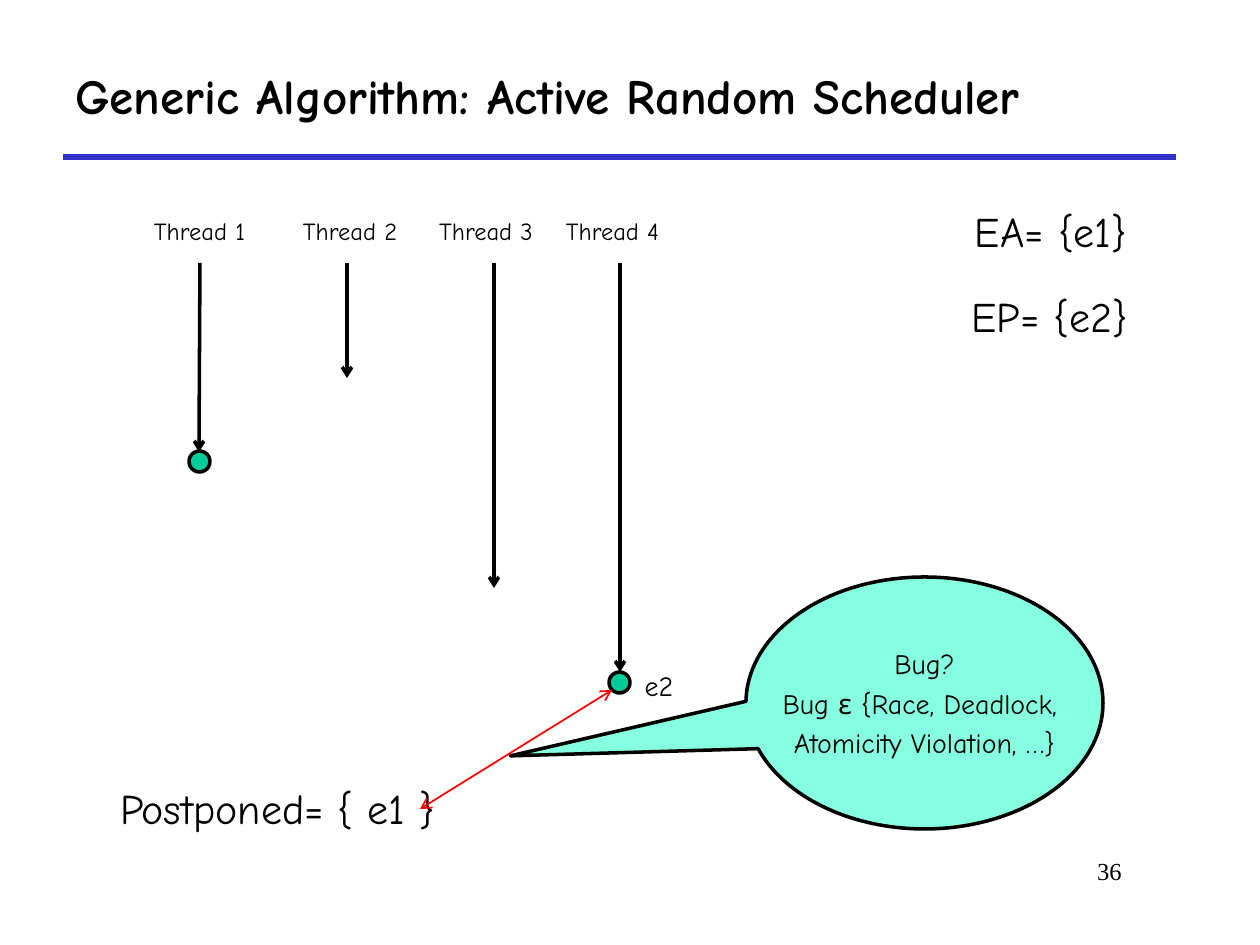
from pptx import Presentation, util as u
from pptx.dml.color import RGBColor
from pptx.enum import shapes, text
from pptx.oxml.ns import qn
from lxml import etree

PX = 914400 / 126
FONT = "Comic Neue"
BLACK = RGBColor(0, 0, 0)
BLUE = RGBColor(0x33, 0x33, 0xCC)
RED = RGBColor(0xFF, 0, 0)
GREEN = RGBColor(0, 0xCC, 0x99)
MINT = RGBColor(0x85, 0xFF, 0xE0)

TITLE = "Generic Algorithm: Active Random Scheduler"
PAGE = "36"
# Thread name, label left, label width, arrow x at top and bottom, arrow end y
THREADS = [
    ("Thread 1", 136, 127, 200, 199, 452),
    ("Thread 2", 284, 132, 347, 347, 378),
    ("Thread 3", 420, 132, 494, 494, 588),
    ("Thread 4", 546, 133, 620, 620, 672),
]
THREAD_TOP, LABEL_TOP = 263, 210
EVENTS = [(189, 451), (609, 672)]
EVENT_SIZE = 21
# Text, left, top, width, height, size
NOTES = [
    ("EA= {e1}", 955, 199, 192, 64, 24),
    ("EP= {e2}", 955, 284, 189, 64, 24),
    ("Postponed= { e1 } ", 105, 776, 359, 64, 24),
    ("e2", 630, 662, 58, 47, 16),
]
# Callout lines, each a list of (text, font)
CALLOUT = [
    [("Bug?", FONT)],
    [("Bug ", FONT), ("ε", "Noto Sans"), (" {Race, Deadlock, ", FONT)],
    [("Atomicity Violation, …}", FONT)],
]

prs = Presentation()


def px(*values):
    return [u.Emu(round(v * PX)) for v in values]


prs.slide_width, prs.slide_height = px(1260, 945)
s = prs.slides.add_slide(prs.slide_layouts[6])


def style_run(r, size, font=FONT, bold=False):
    r.font.size = u.Pt(size)
    r.font.name = font
    r.font.bold = bold
    r.font.color.rgb = BLACK


def add_text(content, box, size, font=FONT, bold=False, wrap=False,
             align=text.PP_ALIGN.CENTER, anchor=text.MSO_ANCHOR.TOP):
    tf = s.shapes.add_textbox(*px(*box)).text_frame
    tf.word_wrap = wrap
    tf.vertical_anchor = anchor
    tf.text = content
    p = tf.paragraphs[0]
    p.alignment = align
    if not wrap:
        tf.auto_size = text.MSO_AUTO_SIZE.SHAPE_TO_FIT_TEXT
        p.space_before = u.Pt(size * 0.2)
    style_run(p.runs[0], size, font, bold)


def add_line(ends, color, width, arrows=()):
    c = s.shapes.add_connector(shapes.MSO_CONNECTOR.STRAIGHT, *px(*ends))
    c.line.color.rgb = color
    c.line.width = u.Pt(width)
    ln = c.line._get_or_add_ln()
    for end in arrows:
        etree.SubElement(ln, qn(f"a:{end}"), type="arrow")
    etree.SubElement(c._element.spPr, qn("a:effectLst"))


def add_outlined(kind, box, fill):
    sp = s.shapes.add_shape(kind, *px(*box))
    sp.shadow.inherit = False
    sp.fill.solid()
    sp.fill.fore_color.rgb = fill
    sp.line.color.rgb = BLACK
    sp.line.width = u.Pt(2)
    return sp


# Title, rule and page number
add_line((63, 157, 1176, 157), BLUE, 3)
add_text(TITLE, (63, 42, 1113, 105), 28, bold=True, wrap=True,
         align=text.PP_ALIGN.LEFT, anchor=text.MSO_ANCHOR.MIDDLE)
add_text(PAGE, (872, 850, 262, 63), 14, font="Times New Roman", wrap=True,
         align=text.PP_ALIGN.RIGHT)

# Threads
for name, left, width, x_top, x_end, y_end in THREADS:
    add_text(name, (left, LABEL_TOP, width, 43), 14)
    add_line((x_top, THREAD_TOP, x_end, y_end), BLACK, 2, ["tailEnd"])

# Events and event sets
for x, y in EVENTS:
    add_outlined(shapes.MSO_SHAPE.OVAL, (x, y, EVENT_SIZE, EVENT_SIZE), GREEN)
for content, *box, size in NOTES:
    add_text(content, box, size)

# Link between the postponed event and e2
add_line((420, 809, 612, 690), RED, 1, ["headEnd", "tailEnd"])

# Bug callout
sp = add_outlined(shapes.MSO_SHAPE.OVAL_CALLOUT, (746, 577, 357, 252), MINT)
sp.adjustments[0], sp.adjustments[1] = -1.16, 0.21
tf = sp.text_frame
tf.word_wrap = False
tf.vertical_anchor = text.MSO_ANCHOR.MIDDLE
for i, line in enumerate(CALLOUT):
    p = tf.add_paragraph() if i else tf.paragraphs[0]
    p.alignment = text.PP_ALIGN.CENTER
    p.space_before = u.Pt(3.2)
    for content, font in line:
        r = p.add_run()
        r.text = content
        style_run(r, 16, font)

prs.save("out.pptx")
